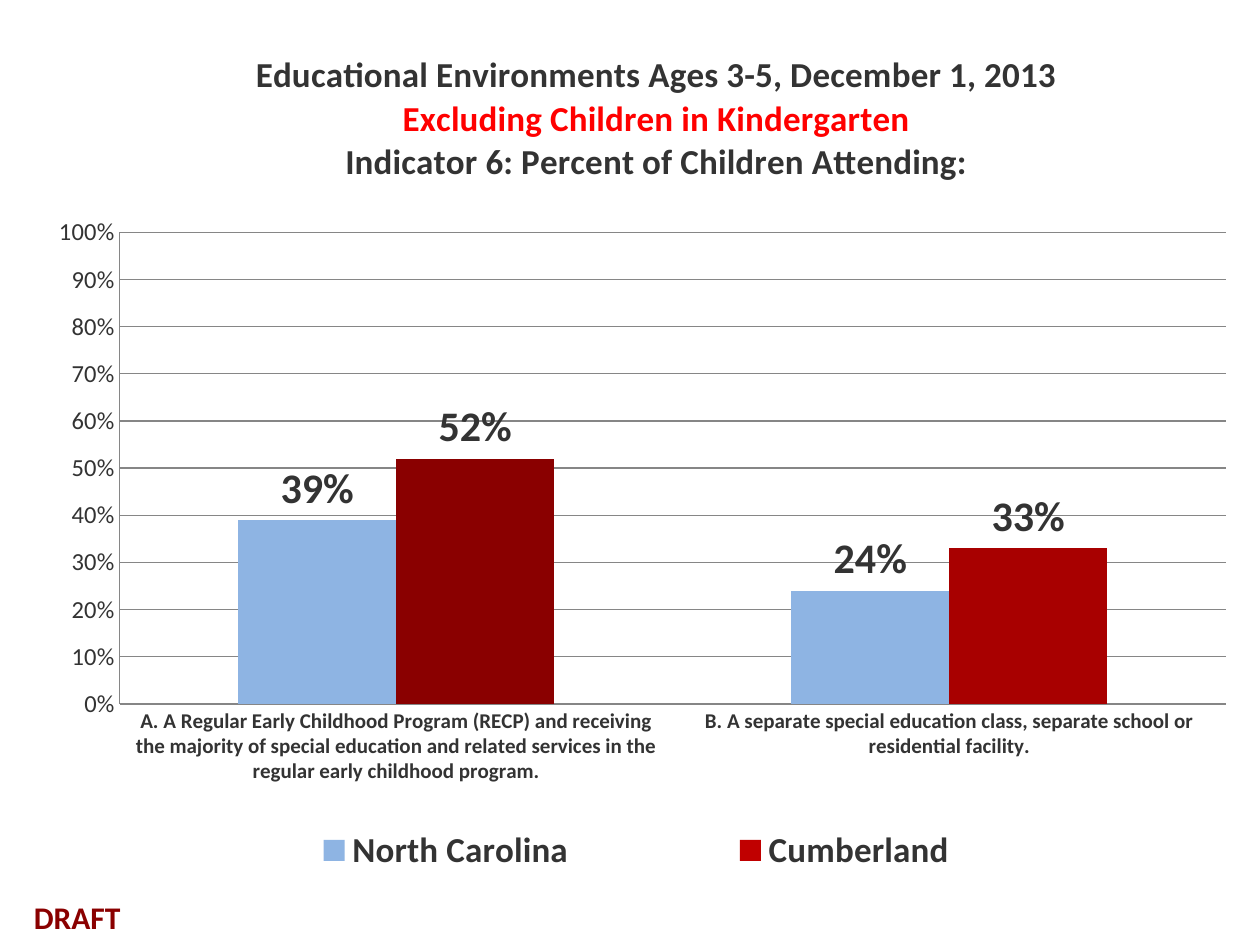
from pptx import Presentation
from pptx.chart.data import CategoryChartData
from pptx.dml.color import RGBColor
from pptx.enum.chart import (XL_CHART_TYPE as ChartType, XL_LABEL_POSITION as LabelPosition,
                             XL_LEGEND_POSITION as LegendPosition, XL_TICK_MARK as TickMark)
from pptx.oxml import parse_xml
from pptx.oxml.ns import nsdecls, qn
from pptx.util import Pt

INK, RED, MAROON, GRID = "333333", "FF0000", "8A0000", "868686"
TITLE = [
    ("Educational Environments Ages 3-5, December 1, 2013", INK),
    ("Excluding Children in Kindergarten", RED),
    ("Indicator 6: Percent of Children Attending:", INK),
]
CATEGORIES = [
    "A. A Regular Early Childhood Program (RECP) and receiving the majority of special "
    "education and related services in the regular early childhood program.",
    "B. A separate special education class, separate school or residential facility.",
]
SERIES = [
    ("North Carolina", (0.39, 0.24), "8EB4E3", ()),
    ("Cumberland", (0.52, 0.33), "C00000", (MAROON, "A80000")),
]


def paint(fill, color):
    """Give a fill one solid colour."""
    fill.solid()
    fill.fore_color.rgb = RGBColor.from_string(color)


def style(font, size, bold=False, color=INK):
    """Set the face, size, weight and colour of a font."""
    font.name, font.size, font.bold = "Calibri", Pt(size), bold
    font.color.rgb = RGBColor.from_string(color)


def write(para, text, **format):
    """Add a formatted span of text to a paragraph."""
    span = para.add_run()
    span.text = text
    style(span.font, **format)


def place(element, index, target=None, **measures):
    """Fix a chart part at fractions of the chart's size."""
    for old in element.findall(qn("c:layout")):
        element.remove(old)
    inner = f'<c:layoutTarget val="{target}"/>' if target else ""
    modes = "".join(f'<c:{side}Mode val="edge"/>' for side in "xy")
    values = "".join(f'<c:{name} val="{value}"/>' for name, value in measures.items())
    element.insert(index, parse_xml(
        f'<c:layout {nsdecls("c")}><c:manualLayout>{inner}{modes}{values}'
        '</c:manualLayout></c:layout>'))


def add_title(chart):
    """Write the three-line chart title."""
    chart.has_title = True
    frame = chart.chart_title.text_frame
    for number, (text, color) in enumerate(TITLE):
        para = frame.add_paragraph() if number else frame.paragraphs[0]
        write(para, text, size=20, bold=True, color=color)
    chart.chart_title.include_in_layout = False
    place(chart.chart_title._element, 1, x=0.2, y=0.05)


def format_axes(chart):
    """Style the category axis and the percent axis with its gridlines."""
    for axis, size, bold in ((chart.category_axis, 12, True), (chart.value_axis, 14, False)):
        style(axis.tick_labels.font, size, bold)
        axis.major_tick_mark = axis.minor_tick_mark = TickMark.NONE
        paint(axis.format.line.fill, GRID)
    scale = chart.value_axis
    scale.minimum_scale, scale.maximum_scale, scale.major_unit = 0, 1, 0.1
    scale.tick_labels.number_format = "0%"
    scale.tick_labels.number_format_is_linked = False
    scale.has_major_gridlines = True
    paint(scale.major_gridlines.format.line.fill, GRID)


def format_bars(plot):
    """Colour the bars and label them with percents."""
    plot.gap_width, plot.overlap, plot.vary_by_categories = 150, 0, False
    for series, (_, _, color, point_colors) in zip(plot.series, SERIES):
        paint(series.format.fill, color)
        series.invert_if_negative = False
        for number, point_color in enumerate(point_colors):
            paint(series.points[number].format.fill, point_color)
        labels = series.data_labels
        labels.show_value = True
        labels.number_format, labels.number_format_is_linked = "0%", False
        labels.position = LabelPosition.OUTSIDE_END
        style(labels.font, 24, True)


def add_legend(chart):
    """Set a wide legend below the bars."""
    chart.has_legend = True
    legend = chart.legend
    legend.position, legend.include_in_layout = LegendPosition.RIGHT, False
    style(legend.font, 20, True)
    place(legend._element, 1, x=0.13, y=0.87, w=0.75, h=0.06)


def add_environment_chart(page, left, top, width, height):
    """Draw the column chart in the given box."""
    data = CategoryChartData(number_format="0%")
    data.categories = CATEGORIES
    for name, values, _, _ in SERIES:
        data.add_series(name, values)
    chart = page.shapes.add_chart(ChartType.COLUMN_CLUSTERED, Pt(left), Pt(top),
                                  Pt(width), Pt(height), data).chart
    style(chart.font, 10)
    add_title(chart)
    format_axes(chart)
    format_bars(chart.plots[0])
    add_legend(chart)
    plot_area = chart._chartSpace.chart.plotArea
    place(plot_area, 0, "inner", x=0.095, y=0.246, w=0.878, h=0.499)


def add_draft_mark(page, left, top, width, height):
    """Write the draft note in the given box."""
    box = page.shapes.add_textbox(Pt(left), Pt(top), Pt(width), Pt(height))
    box.text_frame.word_wrap = False
    write(box.text_frame.paragraphs[0], "DRAFT", size=18, bold=True, color=MAROON)


def main():
    """Build and save the deck."""
    deck = Presentation()
    deck.slide_width, deck.slide_height = Pt(720), Pt(540)
    page = deck.slides.add_slide(deck.slide_layouts[6])
    add_environment_chart(page, 0, 0, 720, 540)
    add_draft_mark(page, 12.24, 509.76, 64.8, 28.8)
    deck.save("out.pptx")


if __name__ == "__main__":
    main()
